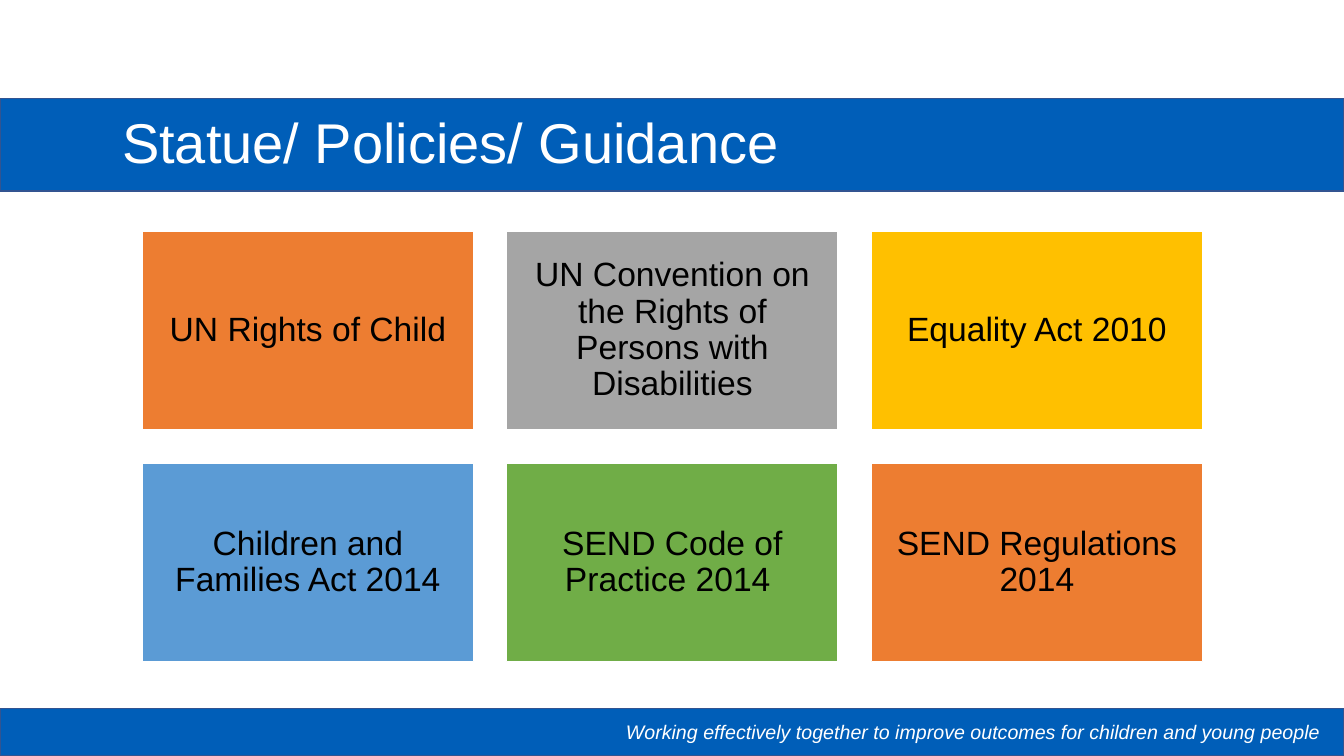
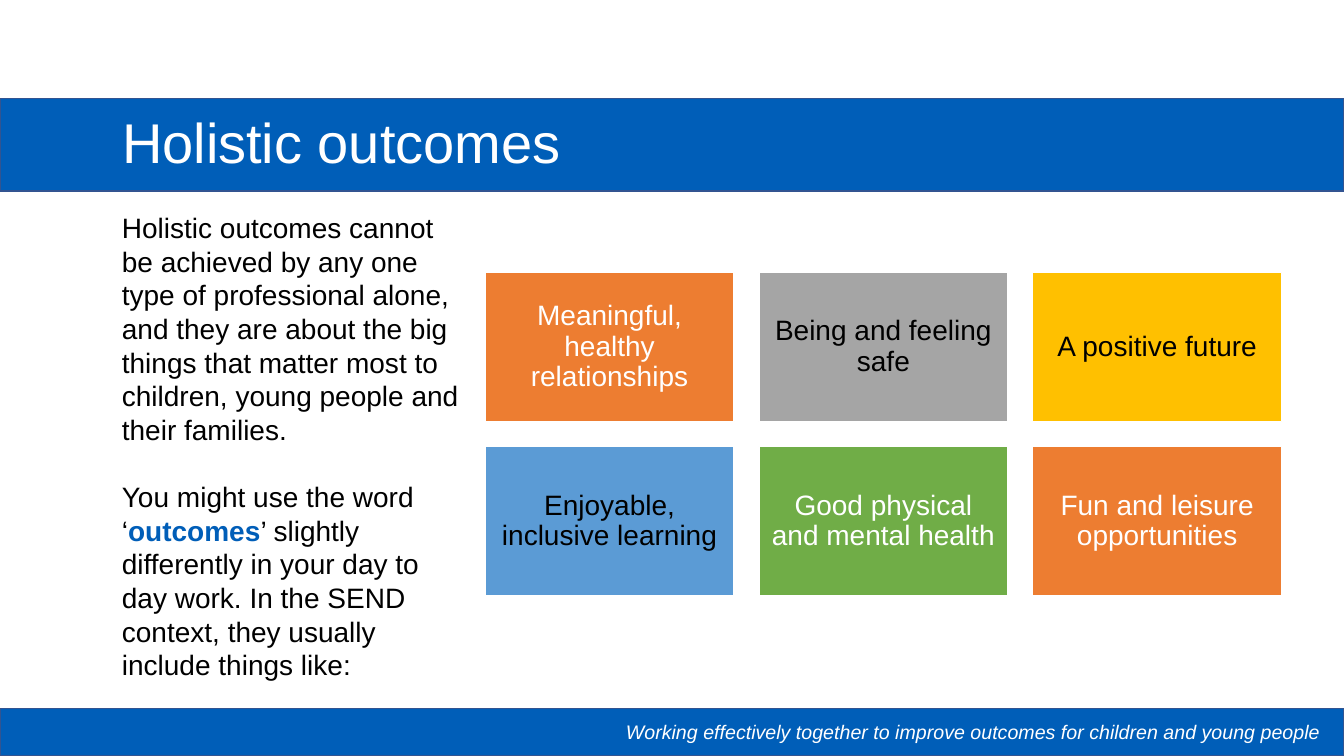
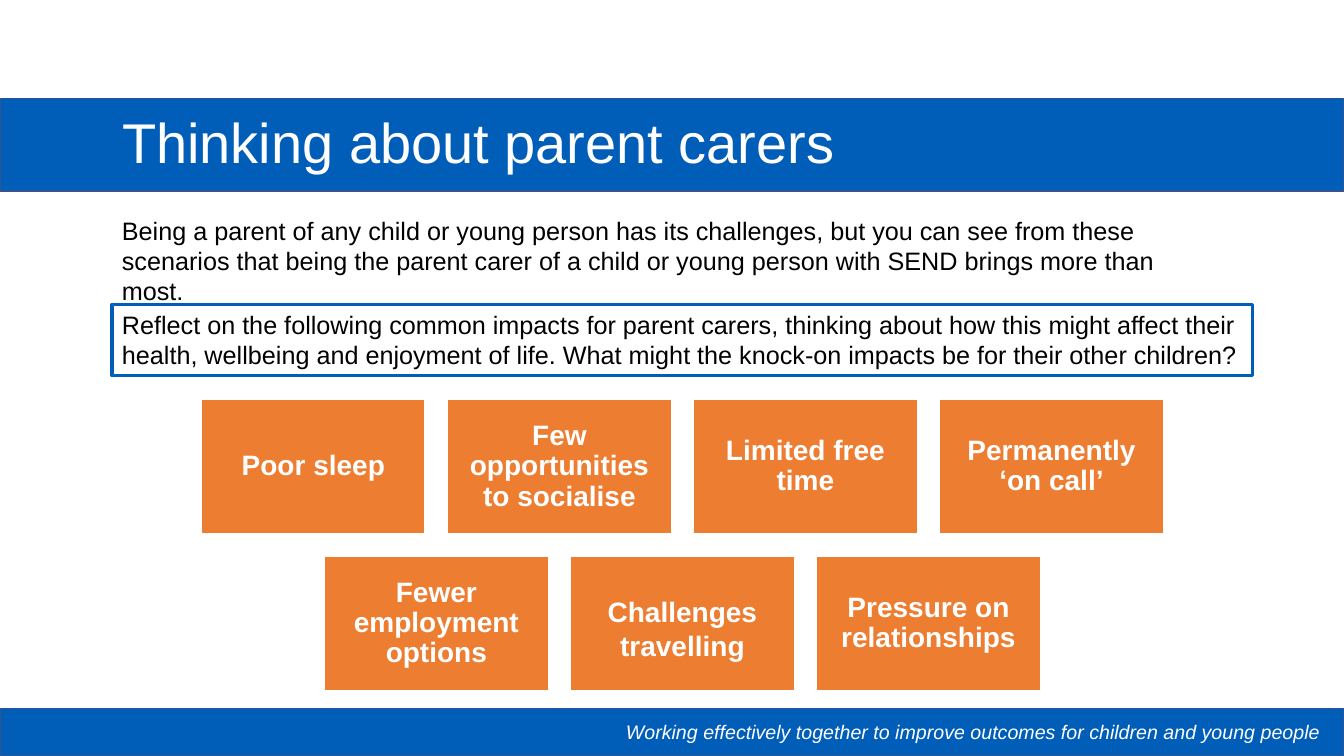
from pptx import Presentation
from pptx.dml.color import RGBColor
from pptx.enum.shapes import MSO_SHAPE
from pptx.enum.text import MSO_ANCHOR, MSO_AUTO_SIZE, PP_ALIGN
from pptx.util import Pt

RECT = MSO_SHAPE.RECTANGLE
LEFT, CENTER = PP_ALIGN.LEFT, PP_ALIGN.CENTER
TOP, MIDDLE = MSO_ANCHOR.TOP, MSO_ANCHOR.MIDDLE
NO_FIT = MSO_AUTO_SIZE.NONE

W, H = 960, 540
FONT = "Arial"
MARGIN = 80
COLORS = {
    "blue": "005EB8", "edge": "325491", "white": "FFFFFF", "black": "000000",
    "orange": "ED7D31", "grey": "A5A5A5", "yellow": "FFC000",
    "sky": "5B9BD5", "green": "70AD47",
}
TAGLINE = "Working effectively together to improve outcomes for children and young people"
GRID_FILLS = ["orange", "grey", "yellow", "sky", "green", "orange"]


def rgb(name):
    return RGBColor.from_string(COLORS[name])


def style(font, size=None, color=None, name=None, bold=None, italic=None):
    if size:
        font.size = Pt(size)
    if color:
        font.color.rgb = rgb(color)
    if name:
        font.name = name
    if bold is not None:
        font.bold = bold
    if italic is not None:
        font.italic = italic


def write(p, text, size, color, **kw):
    style(p.font, size, color, FONT, **kw)
    for part in [text] if isinstance(text, str) else text:
        words, changes = (part, {}) if isinstance(part, str) else part
        r = p.add_run()
        r.text = words
        style(r.font, **changes)


def add_rect(s, box, fill=None, line=None, weight=1):
    sp = s.shapes.add_shape(RECT, *map(Pt, box))
    sp.shadow.inherit = False
    if fill:
        sp.fill.solid()
        sp.fill.fore_color.rgb = rgb(fill)
    else:
        sp.fill.background()
    sp.line.color.rgb = rgb(line)
    sp.line.width = Pt(weight)
    return sp


def fill_text(sp, texts, size, color, gap=0, **kw):
    tf = sp.text_frame
    tf.word_wrap = True
    tf.vertical_anchor = TOP
    for i, text in enumerate(texts):
        p = tf.add_paragraph() if i else tf.paragraphs[0]
        p.alignment = LEFT
        if i:
            p.space_before = Pt(gap)
        write(p, text, size, color, **kw)


def add_text(s, box, texts, size, color="black", **kw):
    fill_text(s.shapes.add_textbox(*map(Pt, box)), texts, size, color, **kw)


def add_tile(s, box, text, size, fill, color, bold):
    sp = add_rect(s, box, fill, "white")
    tf = sp.text_frame
    tf.word_wrap = True
    tf.vertical_anchor = MIDDLE
    inset = Pt(0.3 * size)
    tf.margin_left = tf.margin_right = tf.margin_top = tf.margin_bottom = inset
    p = tf.paragraphs[0]
    p.alignment = CENTER
    p.line_spacing = 0.9
    write(p, text, size, color, bold=bold)


def add_tiles(s, left, top, width, cols, tiles, size, bold=False):
    w = width / (cols + 0.1 * (cols - 1))
    h, gap = 0.6 * w, 0.1 * w
    for start in range(0, len(tiles), cols):
        row = tiles[start:start + cols]
        x = left + (cols - len(row)) * (w + gap) / 2
        y = top + start // cols * (h + gap)
        for i, (text, fill, color) in enumerate(row):
            add_tile(s, (x + i * (w + gap), y, w, h), text, size, fill, color, bold)


def add_slide(prs, heading):
    s = prs.slides.add_slide(prs.slide_layouts[5])
    title = s.shapes.title
    title.left, title.top, title.width, title.height = map(Pt, (MARGIN, 57, 800, 93))
    tf = title.text_frame
    tf.auto_size = NO_FIT
    tf.vertical_anchor = MIDDLE
    p = tf.paragraphs[0]
    p.alignment = LEFT
    p.line_spacing = 0.9
    write(p, heading, 40, "white")
    for top, height in ((70.5, 66), (506, 34)):
        band = add_rect(s, (0, top, W, height), "blue", "edge")
        title.element.addprevious(band.element)
    add_text(s, (440, 511, W - 440, 24), [TAGLINE], 14, "white", italic=True)
    return s


def policies_slide(prs):
    s = add_slide(prs, "Statue/ Policies/ Guidance")
    names = [
        "UN Rights of Child",
        "UN Convention on the Rights of Persons with Disabilities",
        "Equality Act 2010",
        "Children and Families Act 2014",
        "SEND Code of Practice 2014 ",
        "SEND Regulations 2014",
    ]
    tiles = [(name, fill, "black") for name, fill in zip(names, GRID_FILLS)]
    add_tiles(s, 101.5, 165, 757.5, 3, tiles, 24)


def outcomes_slide(prs):
    s = add_slide(prs, "Holistic outcomes")
    outcomes = [
        ("Meaningful, healthy relationships", "white"),
        ("Being and feeling safe", "black"),
        ("A positive future", "black"),
        ("Enjoyable, inclusive learning", "black"),
        ("Good physical and mental health", "white"),
        ("Fun and leisure opportunities", "white"),
    ]
    tiles = [(name, fill, color) for (name, color), fill in zip(outcomes, GRID_FILLS)]
    add_tiles(s, 346.5, 194.5, 569, 3, tiles, 20)
    add_text(s, (MARGIN, 147, 261, 346), [
        "Holistic outcomes cannot be achieved by any one type of professional alone, "
        "and they are about the big things that matter most to children, young people "
        "and their families.",
        ["You might use the word ‘",
         ("outcomes", {"color": "blue", "bold": True}),
         "’ slightly differently in your day to day work. In the SEND context, "
         "they usually include things like:"],
    ], 20, gap=24)


def carers_slide(prs):
    s = add_slide(prs, "Thinking about parent carers")
    add_text(s, (MARGIN, 150, 800, 51), [
        "Being a parent of any child or young person has its challenges, but you can see "
        "from these scenarios that being the parent carer of a child or young person "
        "with SEND brings more than most.",
    ], 18)
    prompt = add_rect(s, (MARGIN, 217.5, 815, 51), line="blue", weight=2.25)
    fill_text(prompt, [
        "Reflect on the following common impacts for parent carers, thinking about how "
        "this might affect their health, wellbeing and enjoyment of life. What might the "
        "knock-on impacts be for their other children?",
    ], 18, "black")
    impacts = [
        "Poor sleep",
        "Few opportunities to socialise",
        "Limited free time",
        "Permanently ‘on call’",
        "Fewer employment options",
        ["Challenges", (" ", {"size": 32, "name": "Calibri", "bold": False}), "travelling"],
        "Pressure on relationships",
    ]
    tiles = [(impact, "orange", "white") for impact in impacts]
    add_tiles(s, 144, 285.5, 687, 4, tiles, 20, bold=True)


def main():
    prs = Presentation()
    prs.slide_width, prs.slide_height = Pt(W), Pt(H)
    policies_slide(prs)
    outcomes_slide(prs)
    carers_slide(prs)
    prs.save("out.pptx")


if __name__ == "__main__":
    main()
